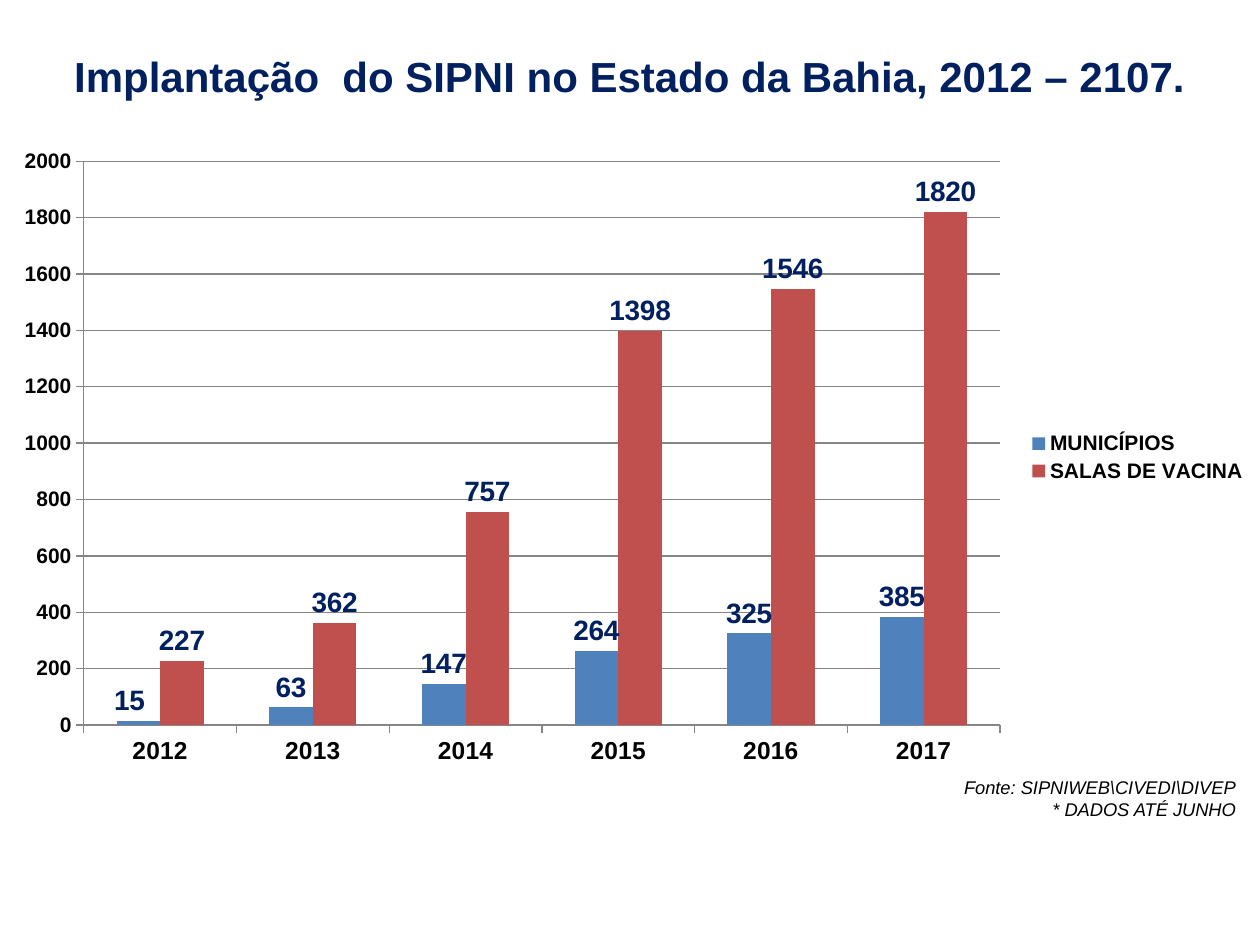
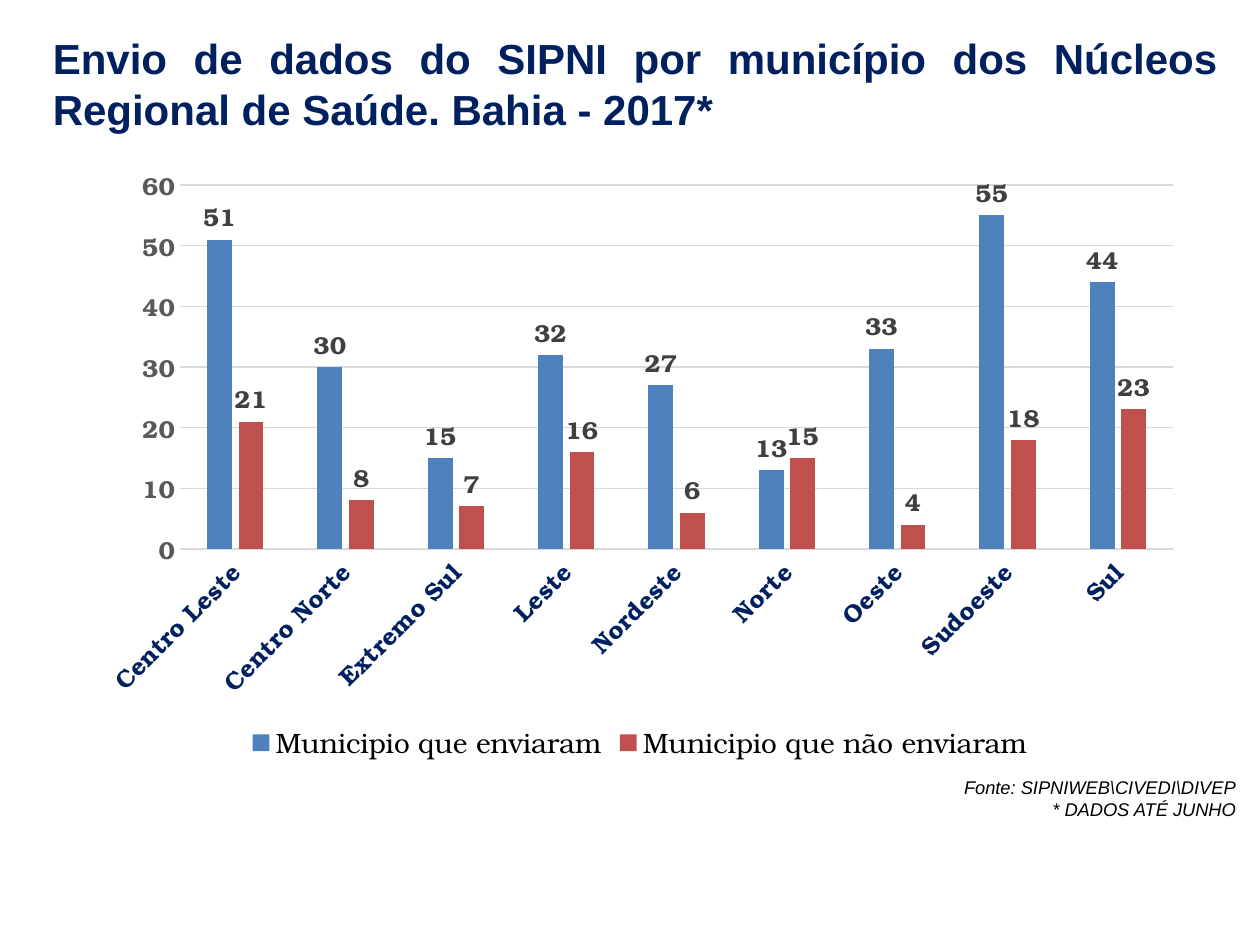
"""Build two slides on the SIPNI rollout in Bahia, each with a column chart."""
from dataclasses import dataclass
from typing import Optional

from lxml import etree
from pptx import Presentation, util as u
from pptx.chart import data as chart_data
from pptx.dml import color
from pptx.enum import chart as charts, text
from pptx.oxml import ns


@dataclass(frozen=True)
class Theme:
    navy: str = "002060"
    black: str = "000000"
    blue: str = "4F81BD"
    red: str = "C0504D"
    axis_grey: str = "868686"
    pale_grey: str = "D9D9D9"
    tick_grey: str = "595959"
    label_grey: str = "404040"
    sans: str = "Arial"
    serif: str = "TeX Gyre Bonum"
    title_size: float = 24
    source_size: float = 10.5
    legend_large: float = 16
    label_large: float = 16
    medium: float = 14
    small: float = 12
    hairline: float = 0.75


THEME = Theme()


@dataclass(frozen=True)
class Frame:
    left: float
    top: float
    width: float
    height: float

    def lengths(self) -> tuple:
        return tuple(u.Cm(side) for side in (self.left, self.top, self.width, self.height))


@dataclass(frozen=True)
class Type:
    size: float
    colour: str
    font: str = THEME.sans
    bold: bool = False
    italic: bool = False


@dataclass(frozen=True)
class ChartStyle:
    categories: Type
    values: Type
    labels: Type
    legend: Type
    legend_place: charts.XL_LEGEND_POSITION
    ticks: charts.XL_TICK_MARK
    line: str
    value_line: bool
    gap: int
    overlap: int
    rotation: int = 0


@dataclass(frozen=True)
class ColumnChart:
    frame: Frame
    plot: Frame
    categories: tuple[str, ...]
    series: dict[str, tuple[int, ...]]
    maximum: int
    step: int
    style: ChartStyle
    first_label_shift: Optional[float] = None


@dataclass(frozen=True)
class ChartPage:
    title: str
    title_frame: Frame
    alignment: text.PP_ALIGN
    chart: ColumnChart


TITLE_TYPE = Type(THEME.title_size, THEME.navy, bold=True)
SOURCE_TYPE = Type(THEME.source_size, THEME.black, italic=True)
SOURCE_FRAME = Frame(18.06, 15.52, 7.11, 1.14)
SOURCE_LINES = ("Fonte: SIPNIWEB\\CIVEDI\\DIVEP", "* DADOS ATÉ JUNHO")
SERIES_COLOURS = (THEME.blue, THEME.red)

ROLLOUT_STYLE = ChartStyle(
    categories=Type(THEME.medium, THEME.black, bold=True),
    values=Type(THEME.small, THEME.black, bold=True),
    labels=Type(THEME.label_large, THEME.navy, bold=True),
    legend=Type(THEME.small, THEME.black, bold=True),
    legend_place=charts.XL_LEGEND_POSITION.RIGHT,
    ticks=charts.XL_TICK_MARK.OUTSIDE,
    line=THEME.axis_grey, value_line=True, gap=150, overlap=0)

REGION_STYLE = ChartStyle(
    categories=Type(THEME.medium, THEME.navy, THEME.serif, bold=True),
    values=Type(THEME.medium, THEME.tick_grey, THEME.serif, bold=True),
    labels=Type(THEME.medium, THEME.label_grey, THEME.serif, bold=True),
    legend=Type(THEME.legend_large, THEME.black, THEME.serif),
    legend_place=charts.XL_LEGEND_POSITION.BOTTOM,
    ticks=charts.XL_TICK_MARK.NONE,
    line=THEME.pale_grey, value_line=False, gap=219, overlap=-27, rotation=-45)

PAGES = (
    ChartPage(
        "Implantação  do SIPNI no Estado da Bahia, 2012 – 2107.",
        Frame(1.19, 0.89, 23.01, 1.27), text.PP_ALIGN.CENTER,
        ColumnChart(
            Frame(0, 2.77, 25.4, 12.9), Frame(1.69, 3.25, 18.47, 11.37),
            tuple(str(year) for year in range(2012, 2018)),
            {"MUNICÍPIOS": (15, 63, 147, 264, 325, 385),
             "SALAS DE VACINA": (227, 362, 757, 1398, 1546, 1820)},
            2000, 200, ROLLOUT_STYLE, first_label_shift=-0.18)),
    ChartPage(
        "Envio de dados do SIPNI por município dos Núcleos Regional de Saúde. Bahia - 2017*",
        Frame(0.81, 0.53, 24, 2.21), text.PP_ALIGN.JUSTIFY,
        ColumnChart(
            Frame(1.7, 3.12, 22.4, 12.34), Frame(3.63, 3.73, 20.02, 7.34),
            ("Centro Leste", "Centro Norte", "Extremo Sul", "Leste", "Nordeste",
             "Norte", "Oeste", "Sudoeste", "Sul"),
            {"Municipio que enviaram": (51, 30, 15, 32, 27, 13, 33, 55, 44),
             "Municipio que não enviaram": (21, 8, 7, 16, 6, 15, 4, 18, 23)},
            60, 10, REGION_STYLE)),
)


def set_font(font, style: Type) -> None:
    font.name = style.font
    font.size = u.Pt(style.size)
    font.bold = style.bold
    font.italic = style.italic
    font.color.rgb = color.RGBColor.from_string(style.colour)


def set_line(line, colour: str) -> None:
    line.width = u.Pt(THEME.hairline)
    line.color.rgb = color.RGBColor.from_string(colour)


def write(box, lines: tuple[str, ...], style: Type, alignment: text.PP_ALIGN) -> None:
    frame = box.text_frame
    frame.word_wrap = True
    frame.auto_size = text.MSO_AUTO_SIZE.NONE
    frame.vertical_anchor = text.MSO_ANCHOR.TOP
    for index, line in enumerate(lines):
        para = frame.add_paragraph() if index else frame.paragraphs[0]
        para.alignment = alignment
        span = para.add_run()
        span.text = line
        set_font(span.font, style)


def add_layout(parent, **settings) -> None:
    """Fill the manual layout of a chart part, directly after its first child or as its first."""
    layout = parent.find(ns.qn("c:layout"))
    if layout is None:
        layout = etree.Element(ns.qn("c:layout"))
        parent.insert(1 if parent.find(ns.qn("c:idx")) is not None else 0, layout)
    manual = etree.SubElement(layout, ns.qn("c:manualLayout"))
    for name, value in settings.items():
        etree.SubElement(manual, ns.qn(f"c:{name}")).set("val", str(value))


def place_plot(chart, spec: ColumnChart) -> None:
    outer, inner = spec.frame, spec.plot
    add_layout(
        chart.element.find(f".//{ns.qn('c:plotArea')}") if hasattr(chart, "element")
        else chart._chartSpace.chart.plotArea,
        layoutTarget="inner", xMode="edge", yMode="edge",
        x=(inner.left - outer.left) / outer.width, y=(inner.top - outer.top) / outer.height,
        w=inner.width / outer.width, h=inner.height / outer.height)


def style_axes(chart, spec: ColumnChart) -> None:
    style = spec.style
    for axis, font in ((chart.category_axis, style.categories), (chart.value_axis, style.values)):
        axis.major_tick_mark = style.ticks
        axis.minor_tick_mark = charts.XL_TICK_MARK.NONE
        set_font(axis.tick_labels.font, font)
        set_line(axis.format.line, style.line)
    if style.rotation:
        body = chart.category_axis._element.find(f"{ns.qn('c:txPr')}/{ns.qn('a:bodyPr')}")
        body.set("rot", str(style.rotation * 60000))
        body.set("vert", "horz")
    values = chart.value_axis
    values.minimum_scale, values.maximum_scale, values.major_unit = 0, spec.maximum, spec.step
    values.has_major_gridlines = True
    set_line(values.major_gridlines.format.line, style.line)
    if not style.value_line:
        values.format.line.fill.background()


def style_series(plot, style: ChartStyle) -> None:
    plot.vary_by_categories = False
    plot.gap_width, plot.overlap = style.gap, style.overlap
    for series, colour in zip(plot.series, SERIES_COLOURS):
        series.format.fill.solid()
        series.format.fill.fore_color.rgb = color.RGBColor.from_string(colour)
        series.invert_if_negative = False
        labels = series.data_labels
        labels.show_value = True
        labels.position = charts.XL_LABEL_POSITION.OUTSIDE_END
        set_font(labels.font, style.labels)


def shift_first_label(series, spec: ColumnChart) -> None:
    label = series.points[0].data_label
    set_font(label.font, spec.style.labels)
    label.position = charts.XL_LABEL_POSITION.OUTSIDE_END
    add_layout(series._element.find(f".//{ns.qn('c:dLbl')}"),
               x=spec.first_label_shift / spec.frame.width, y=0)


def add_columns(page, spec: ColumnChart) -> None:
    data = chart_data.CategoryChartData()
    data.categories = spec.categories
    for name, values in spec.series.items():
        data.add_series(name, values)
    chart = page.shapes.add_chart(
        charts.XL_CHART_TYPE.COLUMN_CLUSTERED, *spec.frame.lengths(), data).chart
    chart.has_title = False
    set_font(chart.font, Type(10, THEME.black))
    chart.has_legend = True
    chart.legend.position = spec.style.legend_place
    chart.legend.include_in_layout = False
    set_font(chart.legend.font, spec.style.legend)
    style_axes(chart, spec)
    plot = chart.plots[0]
    style_series(plot, spec.style)
    if spec.first_label_shift is not None:
        shift_first_label(plot.series[0], spec)
    place_plot(chart, spec)


def add_page(deck, content: ChartPage) -> None:
    page = deck.slides.add_slide(deck.slide_layouts[5])
    title = page.shapes.title
    title.left, title.top, title.width, title.height = content.title_frame.lengths()
    write(title, (content.title,), TITLE_TYPE, content.alignment)
    add_columns(page, content.chart)
    source = page.shapes.add_textbox(*SOURCE_FRAME.lengths())
    write(source, SOURCE_LINES, SOURCE_TYPE, text.PP_ALIGN.RIGHT)


def main() -> None:
    deck = Presentation()
    deck.slide_width, deck.slide_height = u.Cm(25.4), u.Cm(19.05)
    for content in PAGES:
        add_page(deck, content)
    deck.save("out.pptx")


if __name__ == "__main__":
    main()
